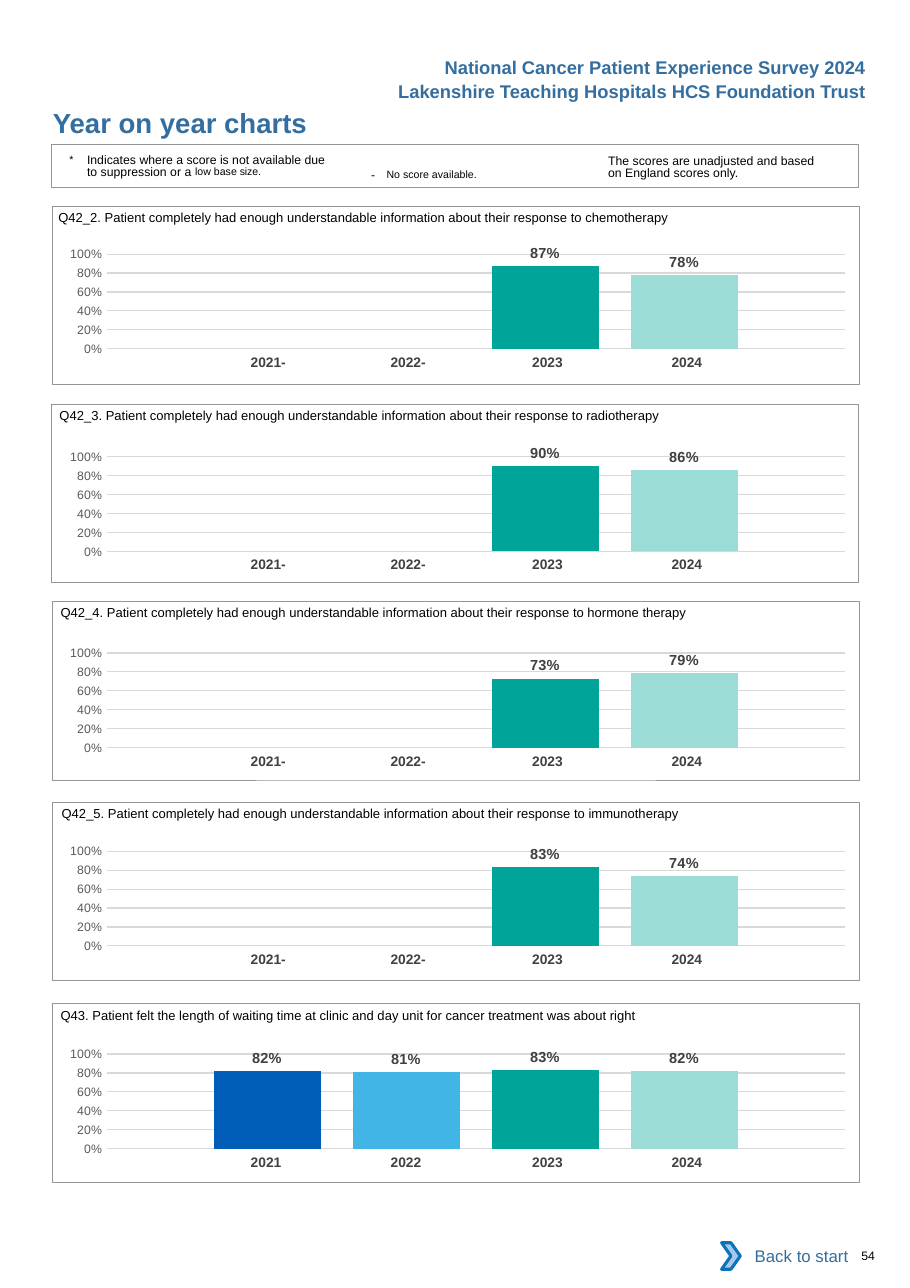
from lxml.etree import SubElement
from pptx import Presentation
from pptx.chart.data import CategoryChartData
from pptx.dml.color import RGBColor
from pptx.enum.chart import XL_CHART_TYPE, XL_LABEL_POSITION, XL_TICK_MARK
from pptx.enum.shapes import MSO_SHAPE
from pptx.enum.text import MSO_ANCHOR, PP_ALIGN
from pptx.oxml.ns import qn
from pptx.util import Pt

PX = 9144  # 100 px to the inch
BLUE, BLACK, GREY = "336E9F", "000000", "939598"
NO_TABLE_STYLE = "{2D5ABB26-0587-4C30-8999-92F81FD0307C}"

HEADINGS = [
    ("Lakenshire Teaching Hospitals HCS Foundation Trust", 344, 68, 452),
    ("National Cancer Patient Experience Survey 2024", 392, 46, 404),
]
UNDERSTOOD = "Patient completely had enough understandable information about their response to"
# question, question left, frame left, frame top, chart top, scores by year
PANELS = [
    (f"Q42_2. {UNDERSTOOD} chemotherapy", 53, 48, 187, 212, (None, None, 0.87, 0.78)),
    (f"Q42_3. {UNDERSTOOD} radiotherapy", 54, 47, 367, 396, (None, None, 0.90, 0.86)),
    (f"Q42_4. {UNDERSTOOD} hormone therapy", 55, 48, 546, 574, (None, None, 0.73, 0.79)),
    (f"Q42_5. {UNDERSTOOD} immunotherapy", 56, 48, 728, 754, (None, None, 0.83, 0.74)),
    ("Q43. Patient felt the length of waiting time at clinic and day unit for cancer "
     "treatment was about right", 55, 48, 911, 938, (0.82, 0.81, 0.83, 0.82)),
]
# year, bar colour, column width, right margin
YEARS = [
    ("2021", "005EB8", 127, 0),
    ("2022", "41B6E6", 127, 0),
    ("2023", "00A499", 134, 4),
    ("2024", "9CDCD7", 127, 12),
]
FRAME_W, FRAME_H = 732, 162
PLOT_LAYOUT = {"x": 0.079, "y": 0.145, "w": 0.915, "h": 0.666}

# runs: text, size, baseline in thousandths of a percent, letter spacing in 1/100 pt
SUPPRESSED = [("*\t", 12, 3000, 0), ("Indicates where a score is not available due to suppression or a ", 8, 0, 0),
              ("low base", 12, 7000, 0), (" size.", 12, 7000, -10)]
NO_SCORE = [("- ", 8, 0, 260), ("No score available.", 12, 3000, 0)]
UNADJUSTED = "The scores are unadjusted and based on England scores only."


def px(*lengths):
    return [length * PX for length in lengths]


def rgb(color):
    return RGBColor.from_string(color)


def set_font(font, size, color, bold=False):
    font.name, font.size, font.bold = "Arial", Pt(size), bold
    font.color.rgb = rgb(color)


def write(frame, content, size=8, color=BLACK, bold=False, align=PP_ALIGN.LEFT,
          margins=(0, 0, 0, 0), anchor=MSO_ANCHOR.TOP, wrap=True, line_pt=None, hanging=0):
    """Fill a text frame with a string or a list of runs; margins are left, top, right, bottom."""
    frame.word_wrap = wrap
    frame.vertical_anchor = anchor
    (frame.margin_left, frame.margin_top,
     frame.margin_right, frame.margin_bottom) = px(*margins)
    paragraph = frame.paragraphs[0]
    paragraph.alignment = align
    if line_pt:
        paragraph.line_spacing = Pt(line_pt)
    if hanging:
        properties = paragraph._p.get_or_add_pPr()
        properties.set("marL", str(hanging * PX))
        properties.set("indent", str(-hanging * PX))
    runs = [(content, size, 0, 0)] if isinstance(content, str) else content
    for text, run_size, baseline, spacing in runs:
        run = paragraph.add_run()
        run.text = text
        set_font(run.font, run_size, color, bold)
        for key, value in (("baseline", baseline), ("spc", spacing)):
            if value:
                run.font._element.set(key, str(value))


def add_text(slide, content, box, **text_format):
    write(slide.shapes.add_textbox(*px(*box)).text_frame, content, **text_format)


def add_box(slide, kind, box, fill=None, line=None, line_pt=0.5):
    shape = slide.shapes.add_shape(kind, *px(*box))
    shape.shadow.inherit = False
    if fill:
        shape.fill.solid()
        shape.fill.fore_color.rgb = rgb(fill)
    else:
        shape.fill.background()
    if line:
        shape.line.color.rgb = rgb(line)
        shape.line.width = Pt(line_pt)
    else:
        shape.line.fill.background()
    return shape


def add_year_table(slide, top, scores):
    width = sum(column_width for _, _, column_width, _ in YEARS)
    table = slide.shapes.add_table(1, len(YEARS), *px(173, top, width, 27)).table
    table.first_row = table.horz_banding = False
    table._tbl.tblPr.find(qn("a:tableStyleId")).text = NO_TABLE_STYLE
    for i, (year, _, column_width, right) in enumerate(YEARS):
        table.columns[i].width = column_width * PX
        missing = scores[i] is None
        cell = table.cell(0, i)
        cell.fill.background()
        (cell.margin_left, cell.margin_top,
         cell.margin_right, cell.margin_bottom) = px(14 if missing else 10, 5, right, 5)
        paragraph = cell.text_frame.paragraphs[0]
        paragraph.alignment = PP_ALIGN.CENTER
        run = paragraph.add_run()
        run.text = year + "-" if missing else year
        set_font(run.font, 9, "414042", bold=True)


def fix_plot_area(chart):
    """Give the inner plot area its fixed share of the chart."""
    plot_area = chart._chartSpace.chart.plotArea
    for old in plot_area.findall(qn("c:layout")):
        plot_area.remove(old)
    layout = SubElement(plot_area, qn("c:layout"))
    plot_area.insert(0, layout)
    manual = SubElement(layout, qn("c:manualLayout"))
    settings = [("layoutTarget", "inner"), ("xMode", "edge"), ("yMode", "edge"), *PLOT_LAYOUT.items()]
    for key, value in settings:
        SubElement(manual, qn(f"c:{key}")).set("val", str(value))


def add_score_chart(slide, top, scores):
    data = CategoryChartData(number_format="0%")
    data.categories = ["1"]
    for (year, *_), score in zip(YEARS, scores):
        data.add_series(year, [score])
    chart = slide.shapes.add_chart(
        XL_CHART_TYPE.COLUMN_CLUSTERED, *px(39, top, 732, 129), data).chart
    chart.has_legend = chart.has_title = False
    set_font(chart.font, 8, "595959")
    fix_plot_area(chart)
    chart.category_axis.visible = False

    axis = chart.value_axis
    axis.minimum_scale, axis.maximum_scale, axis.major_unit = 0, 1, 0.2
    axis.major_tick_mark = axis.minor_tick_mark = XL_TICK_MARK.NONE
    axis.format.line.fill.background()
    axis.major_gridlines.format.line.color.rgb = rgb("D9D9D9")
    axis.major_gridlines.format.line.width = Pt(0.75)
    axis.tick_labels.number_format = "0%"
    axis.tick_labels.number_format_is_linked = False
    set_font(axis.tick_labels.font, 8, "595959")

    bars = chart.plots[0]
    bars.gap_width, bars.overlap, bars.vary_by_categories = 200, -30, False
    for series, (_, color, _, _) in zip(bars.series, YEARS):
        series.format.fill.solid()
        series.format.fill.fore_color.rgb = rgb(color)
        labels = series.data_labels
        labels.show_value = True
        labels.position = XL_LABEL_POSITION.OUTSIDE_END
        labels.number_format, labels.number_format_is_linked = "0%", False
        set_font(labels.font, 9.5, "404040", bold=True)


def main():
    deck = Presentation()
    deck.slide_width, deck.slide_height = px(826, 1169)
    slide = deck.slides.add_slide(deck.slide_layouts[6])

    add_text(slide, "54", (772, 1133, 51, 13), margins=(10, 0, 0, 0))
    add_text(slide, "Year on year charts", (48, 96, 450, 30), size=18, color=BLUE, bold=True)

    for question, question_left, frame_left, frame_top, chart_top, scores in PANELS:
        add_text(slide, question, (question_left, frame_top - 6, 726, 24), size=8.5, margins=(0, 9, 0, 0))
        add_year_table(slide, chart_top + 105, scores)
        add_score_chart(slide, chart_top, scores)
        add_box(slide, MSO_SHAPE.RECTANGLE, (frame_left, frame_top, FRAME_W, FRAME_H), line=GREY)

    add_text(slide, UNADJUSTED, (552, 138, 195, 27), margins=(0, 3, 0, 0), line_pt=8.1)
    add_text(slide, NO_SCORE, (327, 141, 183, 24), margins=(10, 5, 10, 5))
    add_text(slide, SUPPRESSED, (63, 138, 238, 27), margins=(0, 3, 0, 0), line_pt=8.1, hanging=16)
    add_box(slide, MSO_SHAPE.RECTANGLE, (47, 131, FRAME_W, 39), line=GREY, line_pt=0.75)

    for heading, left, top, width in HEADINGS:
        add_text(slide, heading, (left, top, width, 30), size=12, color=BLUE, bold=True,
                 align=PP_ALIGN.RIGHT, margins=(10, 5, 10, 5), wrap=False)

    back = add_box(slide, MSO_SHAPE.RECTANGLE, (662, 1119, 118, 42), fill="FFFFFF")
    write(back.text_frame, "Back to start", size=11, color=BLUE, align=PP_ALIGN.RIGHT,
          margins=(10, 5, 10, 5), anchor=MSO_ANCHOR.MIDDLE)
    add_box(slide, MSO_SHAPE.CHEVRON, (655, 1128, 17, 24), fill="A8C7E9", line="0A74BB", line_pt=2)

    deck.save("out.pptx")


if __name__ == "__main__":
    main()
